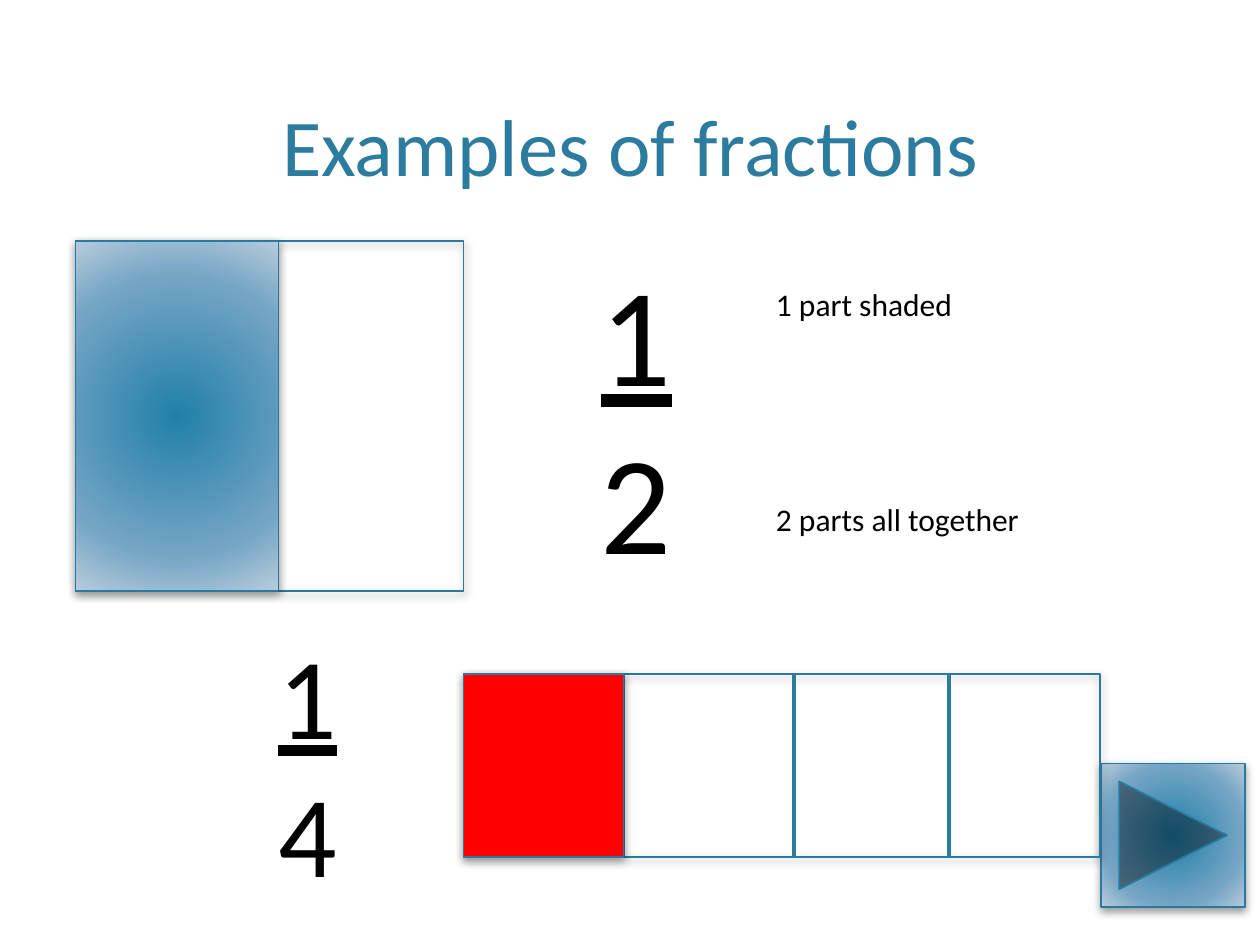
from lxml import etree
from pptx import Presentation
from pptx.dml.color import RGBColor
from pptx.enum.shapes import MSO_CONNECTOR, MSO_SHAPE
from pptx.enum.text import MSO_ANCHOR, PP_ALIGN
from pptx.oxml import parse_xml
from pptx.oxml.ns import nsdecls, qn
from pptx.util import Inches, Pt

RECT = MSO_SHAPE.RECTANGLE
NEXT_BUTTON = MSO_SHAPE.ACTION_BUTTON_FORWARD_OR_NEXT
STRAIGHT = MSO_CONNECTOR.STRAIGHT
TOP, BOTTOM = MSO_ANCHOR.TOP, MSO_ANCHOR.BOTTOM
LEFT, CENTER = PP_ALIGN.LEFT, PP_ALIGN.CENTER

FONT = "Calibri"
BLACK = "000000"
RED = "FF0000"
BLUE = "2C7C9F"
OUTLINE = "287A9E"
RADIAL = [(0, "2180AA"), (69, "75A5C5"), (100, "B8CCDC")]


def rgb(color):
    return RGBColor.from_string(color)


def add_text(s, text, x, y, w, h, size=18, color=BLACK, align=LEFT,
             anchor=TOP, underline_first=False):
    tf = s.shapes.add_textbox(Inches(x), Inches(y), Inches(w), Inches(h)).text_frame
    tf.word_wrap = True
    tf.vertical_anchor = anchor
    for i, line in enumerate(text.split("\n")):
        p = tf.paragraphs[0] if i == 0 else tf.add_paragraph()
        p.alignment = align
        r = p.add_run()
        r.text = line
        r.font.name = FONT
        r.font.size = Pt(size)
        r.font.color.rgb = rgb(color)
        r.font.underline = underline_first and i == 0


def add_shadow(sp):
    sp.shadow.inherit = False
    sp._element.spPr.find(qn("a:effectLst")).append(parse_xml(
        f'<a:outerShdw {nsdecls("a")} blurRad="{Pt(5)}" dist="{Pt(2)}" '
        'dir="5400000" rotWithShape="0"><a:srgbClr val="000000">'
        '<a:alpha val="40000"/></a:srgbClr></a:outerShdw>'))


def fill_radial(sp, stops):
    sp.fill.gradient()
    spPr = sp._element.spPr
    gs = "".join(f'<a:gs pos="{pos * 1000}"><a:srgbClr val="{color}"/></a:gs>'
                 for pos, color in stops)
    spPr.replace(spPr.find(qn("a:gradFill")), parse_xml(
        f'<a:gradFill {nsdecls("a")} rotWithShape="1"><a:gsLst>{gs}</a:gsLst>'
        '<a:path path="circle"><a:fillToRect l="100000" t="100000" '
        'r="100000" b="100000"/></a:path></a:gradFill>'))


def add_box(s, x, y, w, h, kind=RECT, fill=None, gradient=None):
    sp = s.shapes.add_shape(kind, Inches(x), Inches(y), Inches(w), Inches(h))
    if gradient:
        fill_radial(sp, gradient)
    elif fill:
        sp.fill.solid()
        sp.fill.fore_color.rgb = rgb(fill)
    else:
        sp.fill.background()
    sp.line.color.rgb = rgb(OUTLINE)
    sp.line.width = Pt(1)
    add_shadow(sp)


def add_divider(s, x, top, bottom):
    c = s.shapes.add_connector(STRAIGHT, Inches(x), Inches(top), Inches(x), Inches(bottom))
    c.line.color.rgb = rgb(BLUE)
    c.line.width = Pt(2)
    etree.SubElement(c._element.spPr, qn("a:effectLst"))


def add_half(s):
    x, y, h = 0.6, 1.91, 2.78
    add_box(s, x, y, 3.08, h)
    add_box(s, x, y, 1.61, h, gradient=RADIAL)
    add_text(s, "1\n2", 4.67, y, 1.39, 2.79, size=80, underline_first=True)
    add_text(s, "1 part shaded", 6.06, 2.21, 3.02, 0.4)
    add_text(s, "2 parts all together", 6.06, 3.92, 3.02, 0.4)


def add_quarter(s):
    x, y, h = 3.68, 5.35, 1.45
    dividers = [4.95, 6.3, 7.53]
    add_box(s, x, y, 5.05, h)
    for divider in dividers:
        add_divider(s, divider, y, y + h)
    add_box(s, x, y, dividers[0] - x, h, fill=RED)
    add_text(s, "1\n4", 2.11, 4.9, 1.39, 2.32, size=66, underline_first=True)


def main():
    prs = Presentation()
    prs.slide_width, prs.slide_height = Inches(10), Inches(7.5)
    s = prs.slides.add_slide(prs.slide_layouts[6])
    add_text(s, "Examples of fractions", 0.6, 0.12, 8.8, 1.46, size=46,
             color=BLUE, align=CENTER, anchor=BOTTOM)
    add_box(s, 8.74, 6.06, 1.14, 1.14, kind=NEXT_BUTTON, gradient=RADIAL)
    add_half(s)
    add_quarter(s)
    prs.save("out.pptx")


if __name__ == "__main__":
    main()
